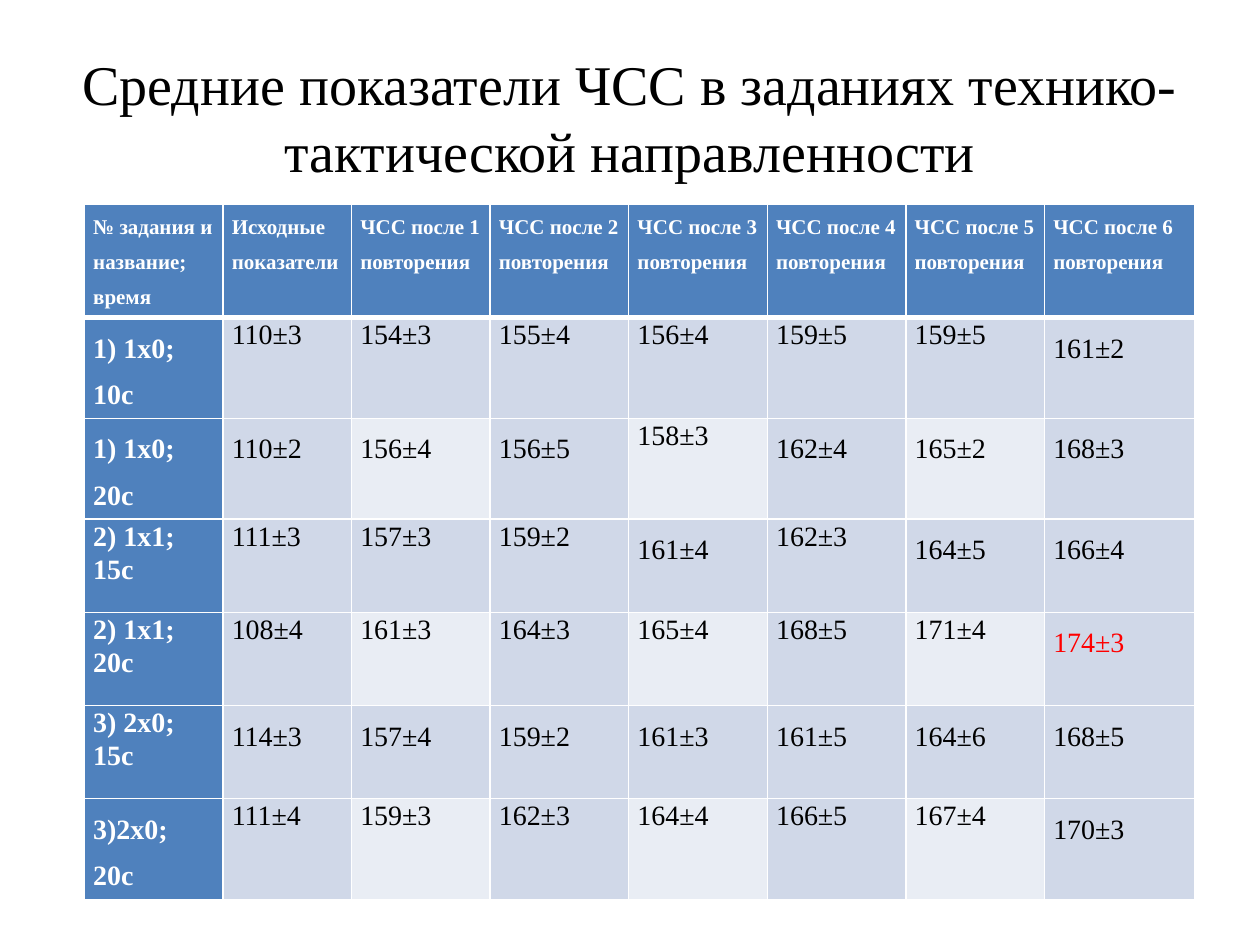
from lxml import etree
from pptx import Presentation
from pptx import util as u
from pptx.dml.color import RGBColor
from pptx.enum import text
from pptx.oxml import ns

TITLE = "Средние показатели ЧСС в заданиях технико-тактической направленности"
HEADERS = ["№ задания и название; время", "Исходные показатели"] + [
    f"ЧСС после {number} повторения" for number in range(1, 7)
]
# Task, heart rates, line spacing of each cell (W = wide, T = tight)
TASKS = [
    ("1) 1х0; 10с", "110±3 154±3 155±4 156±4 159±5 159±5 161±2", "WTTTTTTW"),
    ("1) 1х0; 20с", "110±2 156±4 156±5 158±3 162±4 165±2 168±3", "WWWWTWWW"),
    ("2) 1х1; 15с", "111±3 157±3 159±2 161±4 162±3 164±5 166±4", "TTTTWTWW"),
    ("2) 1х1; 20с", "108±4 161±3 164±3 165±4 168±5 171±4 174±3", "TTTTTTTW"),
    ("3) 2х0; 15с", "114±3 157±4 159±2 161±3 161±5 164±6 168±5", "TWWWWWWW"),
    ("3)2х0; 20с", "111±4 159±3 162±3 164±4 166±5 167±4 170±3", "WTTTTTTW"),
]
HIGHEST_RATE = "174±3"
COLUMN_WIDTHS = [1.1, 1.02] + [1.1] * 5 + [1.19]
ROW_HEIGHT = 0.74
SPACING = {
    "W": {"line_spacing": 1.5},
    "T": {"line_spacing": 1.07, "space_after": u.Pt(8)},
}


def color(value):
    return RGBColor.from_string(value)


def set_values(target, values):
    for name, value in values.items():
        setattr(target, name, value)


class SlideBuilder:
    font = "Times New Roman"
    white, black, red = "FFFFFF", "000000", "FF0000"
    accent, band, light = "4F81BD", "D0D8E8", "E9EDF4"

    def __init__(self, slide):
        self.slide = slide

    def add_text(self, frame, content, size, ink, bold=False, **paragraph_format):
        paragraph = frame.paragraphs[0]
        set_values(paragraph, paragraph_format)
        run = paragraph.add_run()
        run.text = content
        set_values(run.font, {"name": self.font, "size": u.Pt(size), "bold": bold})
        run.font.color.rgb = color(ink)

    def title(self, content, left, top, width, height):
        box = self.slide.shapes.add_textbox(*map(u.Inches, (left, top, width, height)))
        set_values(box.text_frame, {
            "word_wrap": True,
            "vertical_anchor": text.MSO_ANCHOR.MIDDLE,
        })
        self.add_text(box.text_frame, content, 32, self.black,
                      alignment=text.PP_ALIGN.CENTER)

    def borders(self, cell, widths):
        """Draw the borders of a cell from widths in points by side."""
        properties = cell._tc.get_or_add_tcPr()
        for side, width in widths.items():
            line = etree.SubElement(properties, ns.qn(f"a:ln{side}"), w=str(u.Pt(width)))
            fill = etree.SubElement(line, ns.qn("a:solidFill"))
            etree.SubElement(fill, ns.qn("a:srgbClr"), val=self.white)

    def cell(self, cell, content, size, ink, fill, bold, spacing, widths):
        set_values(cell, {
            "margin_left": u.Inches(0.07), "margin_right": u.Inches(0.07),
            "margin_top": 0, "margin_bottom": 0,
        })
        self.borders(cell, widths)
        cell.fill.solid()
        cell.fill.fore_color.rgb = color(fill)
        self.add_text(cell.text_frame, content, size, ink, bold, **SPACING[spacing])

    def table(self, rows, left, top):
        frame = self.slide.shapes.add_table(
            len(rows), len(COLUMN_WIDTHS), u.Inches(left), u.Inches(top),
            u.Inches(sum(COLUMN_WIDTHS)), u.Inches(ROW_HEIGHT * len(rows)))
        table = frame.table
        for column, width in zip(table.columns, COLUMN_WIDTHS):
            column.width = u.Inches(width)
        for row_index, (contents, spacings) in enumerate(rows):
            table.rows[row_index].height = u.Inches(ROW_HEIGHT)
            header = row_index == 0
            widths = {"L": 1, "R": 1, "T": 3 if row_index == 1 else 1,
                      "B": 3 if header else 1}
            for column_index, content in enumerate(contents):
                label = header or column_index == 0
                if label:
                    ink, fill = self.white, self.accent
                else:
                    ink = self.red if content == HIGHEST_RATE else self.black
                    checkered = row_index % 2 == 0 and column_index % 2 == 0
                    fill = self.light if checkered else self.band
                self.cell(table.cell(row_index, column_index), content,
                          12 if header else 16, ink, fill, label,
                          spacings[column_index], widths)


def main():
    presentation = Presentation()
    set_values(presentation, {"slide_width": u.Inches(10), "slide_height": u.Inches(7.5)})
    slide = presentation.slides.add_slide(presentation.slide_layouts[6])
    builder = SlideBuilder(slide)
    builder.title(TITLE, 0.5, 0.3, 9, 1.25)
    rows = [(HEADERS, "W" * len(HEADERS))]
    rows += [([task, *rates.split()], spacings) for task, rates, spacings in TASKS]
    builder.table(rows, 0.67, 1.62)
    presentation.save("out.pptx")


if __name__ == "__main__":
    main()
